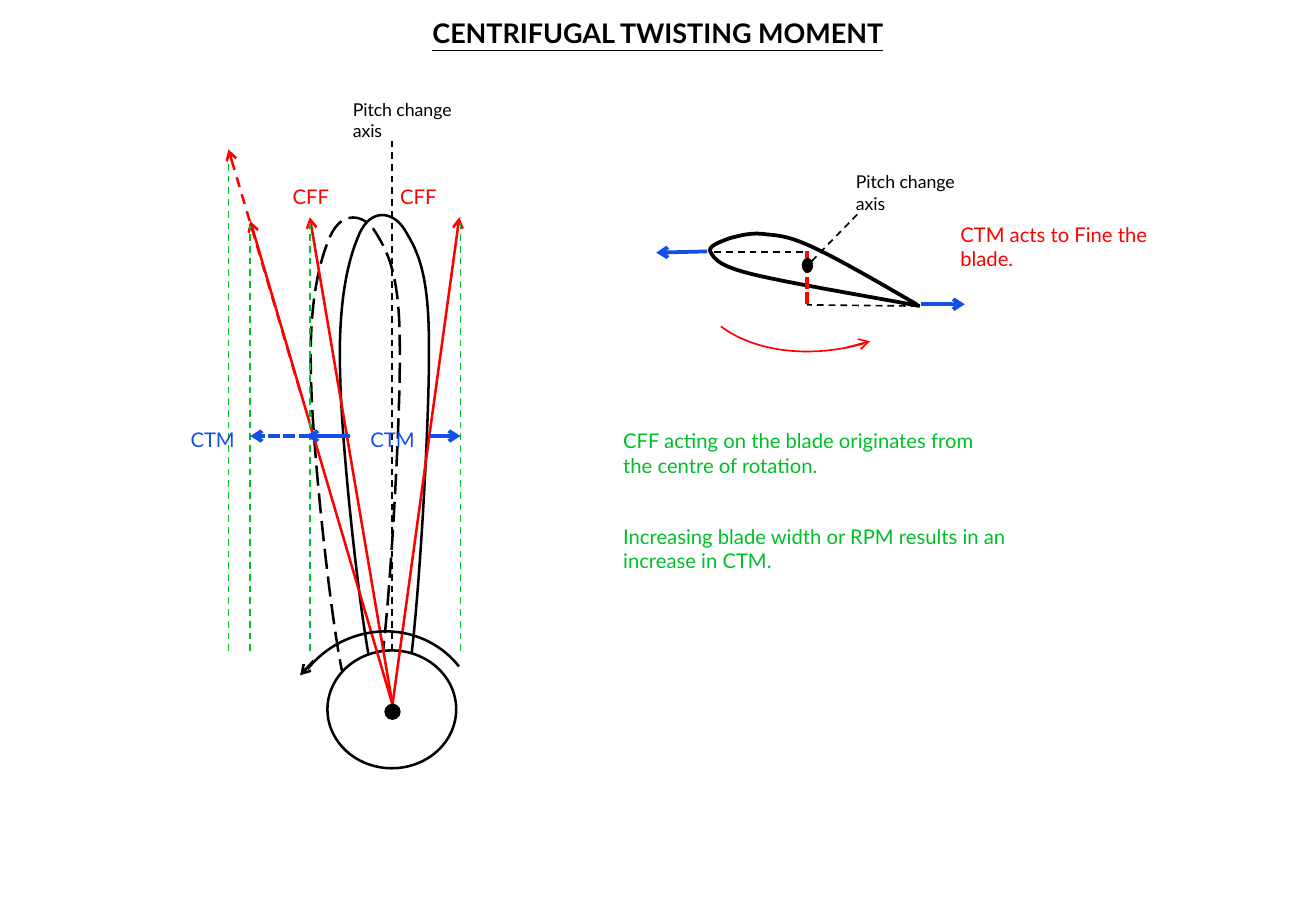
from math import cos, radians, sin

from lxml.etree import SubElement
from pptx import Presentation
from pptx.dml.color import RGBColor
from pptx.enum.dml import MSO_LINE
from pptx.enum.shapes import MSO_CONNECTOR, MSO_SHAPE
from pptx.enum.text import MSO_ANCHOR, PP_ALIGN
from pptx.oxml.ns import qn
from pptx.util import Inches, Pt

BLACK = RGBColor(0, 0, 0)
WHITE = RGBColor(255, 255, 255)
RED = RGBColor(255, 0, 0)
BLUE = RGBColor(0x14, 0x50, 0xE6)
GREEN = RGBColor(0, 0xBE, 0x28)
FONT = "Lato"
DASH, LONG, SHORT = MSO_LINE.DASH, MSO_LINE.LONG_DASH, MSO_LINE.SQUARE_DOT

# Places are columns and rows of a grid with ten cells to the inch.
CELL = Inches(0.1)
WIDE, HIGH = 108.3, 75
TITLE = "CENTRIFUGAL TWISTING MOMENT"

# text, (column, row, width, height), size, colour, tab stop
LABELS = [
    ("CFF\tCFF", (23.1, 14.7, 26.4, 3), 12, RED, 8.85),
    ("CTM\tCTM", (14.7, 34.7, 31.4, 3), 12, BLUE, 14.8),
    ("Pitch change\naxis", (69.45, 13.6, 15.2, 4.5), 10.5, BLACK, None),
    ("Pitch change\naxis", (28.05, 7.65, 19.7, 4.5), 10.5, BLACK, None),
    ("CFF acting on the blade originates from the centre of rotation.",
     (50.3, 34.8, 33.1, 5), 12, GREEN, None),
    ("Increasing blade width or RPM results in an increase in CTM.",
     (50.3, 42.65, 36.2, 5), 12, GREEN, None),
    ("CTM acts to Fine the blade.", (78.05, 17.8, 17.6, 5), 12, RED, None),
]

# Curves: a start point, then two handles and an end for each piece.
FOIL = [
    (75.7, 25.2), (70.3, 24.2), (64.9, 23.3), (62, 22.6),
    (59.1, 21.9), (58.8, 21.3), (58.5, 20.8),
    (58.1, 20.3), (59.3, 19.9), (60.1, 19.6),
    (60.9, 19.4), (61.9, 19.1), (63.1, 19.3),
    (64.3, 19.4), (65.1, 19.5), (67.2, 20.5),
    (69.3, 21.5), (72.4, 23.3), (75.5, 25.1),
]
BLADE = [
    (28.3, 55.9), (27.3, 51.8), (25.7, 37.1), (25.6, 31),
    (25.4, 24.9), (26.3, 21.4), (27.2, 19.4),
    (28.1, 17.4), (29.9, 17.5), (30.9, 19.1),
    (31.8, 20.6), (32.9, 22.3), (32.9, 28.4),
    (33, 34.6), (32, 51.5), (31.2, 56),
    (30.4, 60.6), (29.2, 60.1), (28.3, 55.9),
]
FOIL_BOX, FOIL_TURN = (58.3, 20, 17.8, 3.6), 10.4
BLADE_BOX, BLADE_TURN = (8.6, 34.9, 41.3, 7.4), 270
SHIFT = (2.4, -0.2)  # from the dashed blade to the solid one

# preset, box, fill, line colour, points, rotation, arc ends
HUB = (MSO_SHAPE.OVAL, (26.95, 53.55, 10.6, 9.7), WHITE, BLACK, 1.5, 0, ())
ROUNDS = [
    (MSO_SHAPE.OVAL, (66.05, 21.3, 0.8, 1.1), BLACK, BLACK, 1, 0, ()),
    (MSO_SHAPE.OVAL, (31.7, 58, 1.2, 1.2), BLACK, BLACK, 1, 0, ()),
    (MSO_SHAPE.ARC, (56.45, 11.7, 24.7, 16.9), None, RED, 1, 164.3,
     (162.11, 204.21)),
    (MSO_SHAPE.ARC, (23.4, 52.1, 16.1, 15.5), None, BLACK, 1.5, 321.8,
     (153.56, 0)),
]

# Groups of lines with one style: colour, points, dash, arrow, ends
AXIS, PULL, ROOT = (32.3, 58), 35.9, 53.6
LINES = [
    (BLACK, 1, DASH, False, [
        (66.8, 21.5, 70.8, 17.4), (66.1, 20.74, 58.6, 20.74),
        (75.5, 25.2, 66.4, 25.1), (32.24, ROOT, 32.24, 11.2)]),
    (RED, 2.25, SHORT, False, [(66.4, 25, 66.4, 20.7)]),
    (RED, 1, None, True, [(69.7, 28.6, 71.6, 28.1)]),
    (RED, 1.5, None, True, [
        AXIS + end for end in [(37.8, 17.9), (25.5, 17.9), (20.6, 18.2)]]),
    (GREEN, 1, DASH, False, [
        (x, ROOT, x, top) for x, top in
        [(25.5, 18.2), (37.9, 17.9), (20.6, 18.6), (18.8, 12.3)]]),
    (BLUE, 2.25, None, True, [
        (58.2, 20.7, 54, 20.8), (75.8, 25.05, 79.4, 25.05),
        (35.4, PULL, 37.9, PULL), (28.8, PULL, 25.2, PULL)]),
    (BLUE, 2.25, SHORT, True, [(25.5, PULL, 20.6, PULL)]),
    (BLACK, 1.5, None, True, [(25.8, 54.4, 24.7, 55.6)]),
    (RED, 1.5, DASH, True, [(24.7, 32.2, 18.8, 12.3)]),
]


def grid(cells):
    return [round(n * CELL) for n in cells]


def stroke(line, color, width, dash=None):
    line.color.rgb = color
    line.width = Pt(width)
    if dash:
        line.dash_style = dash


def style(text, size, color, bold=False):
    for para in text.paragraphs:
        for run in para.runs:
            font = run.font
            font.name, font.size, font.color.rgb = FONT, Pt(size), color
            font.bold = font.underline = bold


def place(shape, box):
    shape.left, shape.top, shape.width, shape.height = grid(box)


def label(words, box, size, color, tab):
    text = shapes.add_textbox(*grid(box)).text_frame
    text.word_wrap = True
    text.text = words
    style(text, size, color)
    if tab:
        props = text.paragraphs[0]._p.get_or_add_pPr()
        stops = SubElement(props, qn("a:tabLst"))
        SubElement(stops, qn("a:tab"), pos=str(round(tab * CELL)), algn="l")


def curve(knots, box, turn, width, dash=None, shift=(0, 0), close=True):
    """Draw joined cubic Bezier pieces inside a turned box."""
    left, top, wide, high = box
    c, s = cos(radians(turn)), sin(radians(turn))
    dots = []
    for x, y in knots:
        dx, dy = x - left - wide / 2, y - top - high / 2
        dots.append(grid((c * dx + s * dy + wide / 2,
                          c * dy - s * dx + high / 2)))
    pen = shapes.build_freeform(*dots[0], scale=1.0)
    pen.add_line_segments(dots[1:], close=close)
    shape = pen.convert_to_shape()
    place(shape, (left + shift[0], top + shift[1], wide, high))
    shape.rotation = turn
    shape.shadow.inherit = False
    shape.fill.background()
    stroke(shape.line, BLACK, width, dash)

    track = next(shape._element.iter(qn("a:path")))
    for key, size in zip("wh", grid((wide, high))):
        track.set(key, str(size))
    for point, (x, y) in zip(track.iter(qn("a:pt")), dots):
        point.set("x", str(x))
        point.set("y", str(y))
    sides = track.findall(qn("a:lnTo"))
    for i in range(0, len(sides), 3):
        first, *rest = sides[i:i + 3]
        first.tag = qn("a:cubicBezTo")
        for side in rest:
            first.append(side[0])
            track.remove(side)


def rounded(kind, box, fill, color, width, turn, ends):
    shape = shapes.add_shape(kind, *grid(box))
    shape.shadow.inherit = False
    shape.rotation = turn
    for i, end in enumerate(ends):
        shape.adjustments[i] = end
    if fill is None:
        shape.fill.background()
    else:
        shape.fill.solid()
        shape.fill.fore_color.rgb = fill
    stroke(shape.line, color, width)


def link(ends, color, width, dash, arrow):
    line = shapes.add_connector(MSO_CONNECTOR.STRAIGHT, *grid(ends))
    stroke(line.line, color, width, dash)
    props = line._element.spPr
    if arrow:
        SubElement(props.find(qn("a:ln")), qn("a:tailEnd"), type="arrow")
    SubElement(props, qn("a:effectLst"))


deck = Presentation()
deck.slide_width, deck.slide_height = grid((WIDE, HIGH))
slide = deck.slides.add_slide(deck.slide_layouts[5])
shapes = slide.shapes

title = shapes.title
place(title, (0, 0.85, WIDE, 3.7))
title.text_frame.text = TITLE
title.text_frame.vertical_anchor = MSO_ANCHOR.MIDDLE
title.text_frame.paragraphs[0].alignment = PP_ALIGN.CENTER
style(title.text_frame, 16, BLACK, bold=True)

curve(FOIL, FOIL_BOX, FOIL_TURN, 2.25, close=False)
curve(BLADE, BLADE_BOX, BLADE_TURN, 1.5, LONG)
curve(BLADE, BLADE_BOX, BLADE_TURN, 1.5, shift=SHIFT)
rounded(*HUB)
for color, width, dash, arrow, group in LINES:
    for ends in group:
        link(ends, color, width, dash, arrow)
for item in ROUNDS:
    rounded(*item)
for item in LABELS:
    label(*item)

deck.save("out.pptx")
